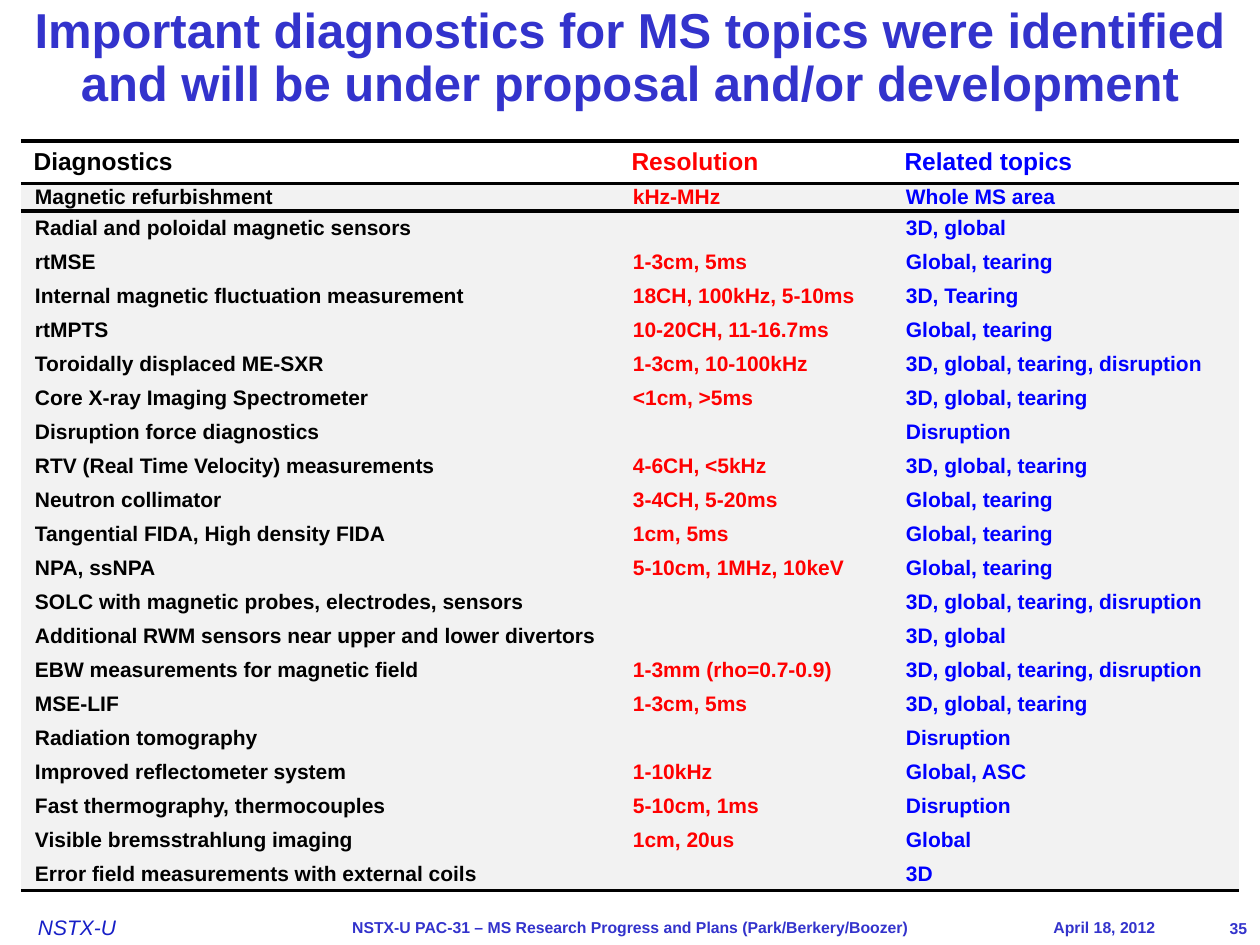
from lxml import etree
from pptx import Presentation
from pptx.dml.color import RGBColor
from pptx.enum.text import MSO_ANCHOR, PP_ALIGN
from pptx.oxml.ns import qn
from pptx.util import Emu, Pt

MID, TOP = MSO_ANCHOR.MIDDLE, MSO_ANCHOR.TOP
LEFT, CENTER, RIGHT = PP_ALIGN.LEFT, PP_ALIGN.CENTER, PP_ALIGN.RIGHT
PX = 914400 / 126
NO_GRID = "{2D5ABB26-0587-4C30-8999-92F81FD0307C}"
BLUE, BLACK = "3333CC", "000000"
INKS = [BLACK, "FF0000", "0000FF"]

TITLE = ("Important diagnostics for MS topics were identified "
         "and will be under proposal and/or development")
LABELS = [
    (TITLE, (0, 1, 1260, 116), dict(size=28, align=CENTER, line=0.9, pad=(13, 6))),
    ("NSTX-U PAC-31 – MS Research Progress and Plans (Park/Berkery/Boozer)",
     (284, 911, 692, 32), dict(size=9, align=CENTER)),
    ("April 18, 2012", (882, 911, 273, 32), dict(size=9, align=RIGHT)),
    ("NSTX-U", (38, 915, 110, 25),
     dict(size=12, color="171FC7", bold=False, italic=True, anchor=TOP)),
    ("35", (1155, 917, 105, 22), dict(size=9, align=RIGHT, pad=(13, 0))),
]
HEADS = ("Diagnostics", "Resolution", "Related topics")
ROWS = [
    ("Magnetic refurbishment", "kHz-MHz", "Whole MS area"),
    ("Radial and poloidal magnetic sensors", "", "3D, global"),
    ("rtMSE", "1-3cm, 5ms", "Global, tearing"),
    ("Internal magnetic fluctuation measurement", "18CH, 100kHz, 5-10ms", "3D, Tearing"),
    ("rtMPTS", "10-20CH, 11-16.7ms", "Global, tearing"),
    ("Toroidally displaced ME-SXR", "1-3cm, 10-100kHz", "3D, global, tearing, disruption"),
    ("Core X-ray Imaging Spectrometer", "<1cm, >5ms", "3D, global, tearing"),
    ("Disruption force diagnostics", "", "Disruption"),
    ("RTV (Real Time Velocity) measurements", "4-6CH, <5kHz", "3D, global, tearing"),
    ("Neutron collimator", "3-4CH, 5-20ms", "Global, tearing"),
    ("Tangential FIDA, High density FIDA", "1cm, 5ms", "Global, tearing"),
    ("NPA, ssNPA", "5-10cm, 1MHz, 10keV", "Global, tearing"),
    ("SOLC with magnetic probes, electrodes, sensors", "", "3D, global, tearing, disruption"),
    ("Additional RWM sensors near upper and lower divertors", "", "3D, global"),
    ("EBW measurements for magnetic field", "1-3mm (rho=0.7-0.9)",
     "3D, global, tearing, disruption"),
    ("MSE-LIF", "1-3cm, 5ms", "3D, global, tearing"),
    ("Radiation tomography", "", "Disruption"),
    ("Improved reflectometer system", "1-10kHz", "Global, ASC"),
    ("Fast thermography, thermocouples", "5-10cm, 1ms", "Disruption"),
    ("Visible bremsstrahlung imaging", "1cm, 20us", "Global"),
    ("Error field measurements with external coils", "", "3D"),
]
WIDTHS = [598, 273, 347]
HEIGHTS = [42, 28] + [34] * (len(ROWS) - 1)


def px(n):
    return Emu(round(n * PX))


def rgb(code):
    return RGBColor.from_string(code)


def write(frame, text, size=12, color=BLUE, bold=True, italic=False,
          align=LEFT, line=None, indent=0):
    para = frame.paragraphs[0]
    para.alignment = align
    if line:
        para.line_spacing = line
    if indent:
        para._p.get_or_add_pPr().set("marL", str(px(indent)))
    if not text:
        etree.SubElement(para._p, qn("a:endParaRPr"), sz=str(size * 100))
        return
    run = para.add_run()
    run.text = text
    font = run.font
    font.name, font.size, font.bold, font.italic = "Arial", Pt(size), bold, italic
    font.color.rgb = rgb(color)


def label(slide, text, box, anchor=MID, pad=(0, 0), **style):
    frame = slide.shapes.add_textbox(*map(px, box)).text_frame
    frame.word_wrap = True
    frame.vertical_anchor = anchor
    frame.margin_left = frame.margin_right = px(pad[0])
    frame.margin_top = frame.margin_bottom = px(pad[1])
    write(frame, text, **style)


def rule(cell, side):
    edge = etree.SubElement(cell._tc.get_or_add_tcPr(), qn("a:ln" + side), w=str(Pt(2)))
    fill = etree.SubElement(edge, qn("a:solidFill"))
    etree.SubElement(fill, qn("a:srgbClr"), val=BLACK)


def paint(cell, color):
    cell.fill.solid()
    cell.fill.fore_color.rgb = rgb(color)


def grid(slide):
    data = [HEADS] + ROWS
    box = (21, 141, sum(WIDTHS), sum(HEIGHTS))
    table = slide.shapes.add_table(len(data), len(HEADS), *map(px, box)).table
    table.first_row = table.horz_banding = False
    table._tbl.tblPr.find(qn("a:tableStyleId")).text = NO_GRID
    for col, wide in zip(table.columns, WIDTHS):
        col.width = px(wide)
    for r, (row, high) in enumerate(zip(data, HEIGHTS)):
        table.rows[r].height = px(high)
        sides = "TB" if r == 0 else "T" if r == 1 else "B" if r == len(ROWS) else ""
        for c, (text, ink) in enumerate(zip(row, INKS)):
            cell = table.cell(r, c)
            cell.vertical_anchor = MID
            if r:
                cell.margin_left = cell.margin_right = cell.margin_top = px(1)
                cell.margin_bottom = 0
            for side in sides:
                rule(cell, side)
            paint(cell, "F2F2F2" if r else "FFFFFF")
            write(cell.text_frame, text, size=12 if r else 14, color=ink,
                  indent=13 if r else 0)


def main():
    """Build the diagnostics slide and save it."""
    deck = Presentation()
    deck.slide_width, deck.slide_height = px(1260), px(945)
    slide = deck.slides.add_slide(deck.slide_layouts[6])
    for text, box, style in LABELS:
        label(slide, text, box, **style)
    grid(slide)
    deck.save("out.pptx")


if __name__ == "__main__":
    main()
